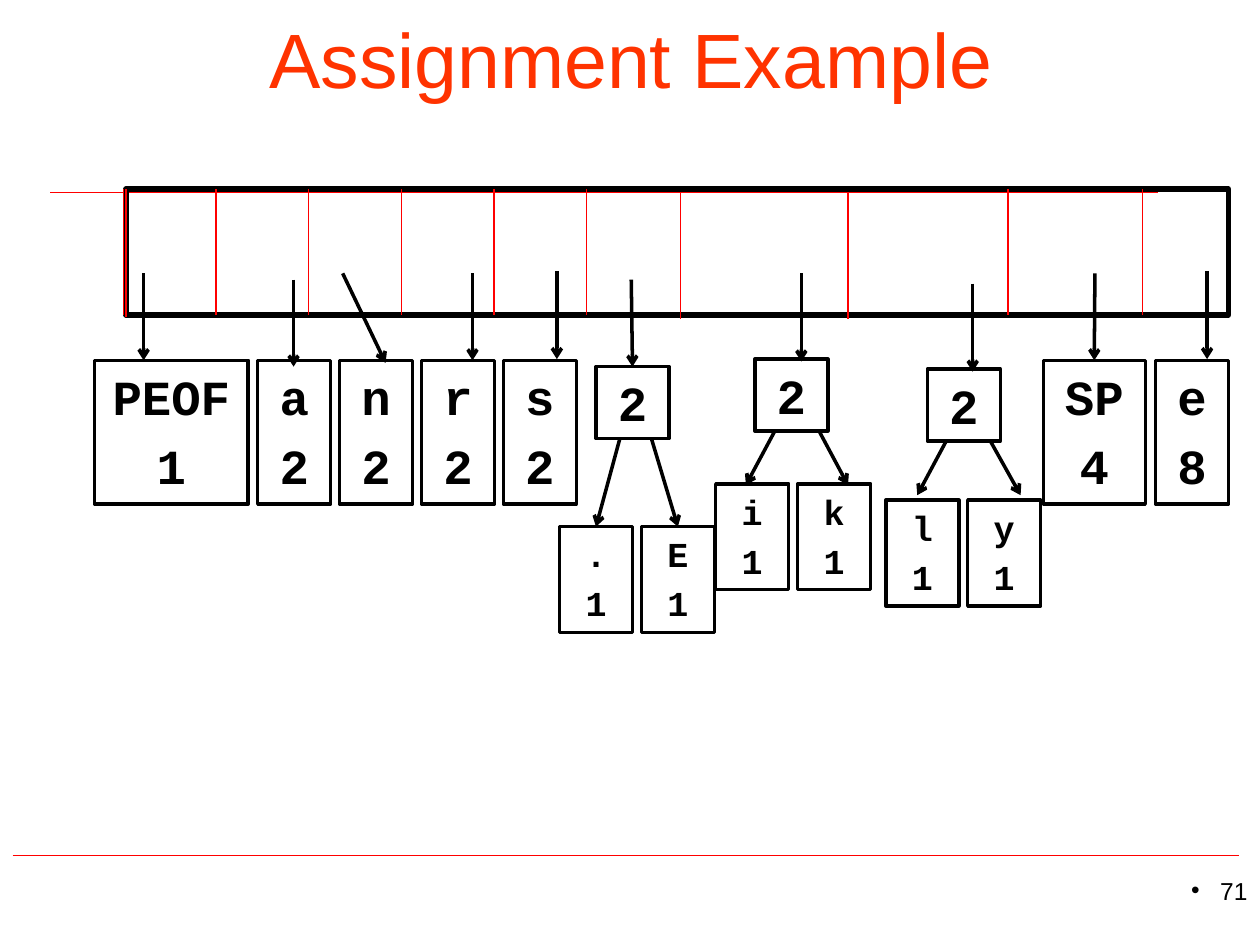
from dataclasses import dataclass

from lxml.etree import SubElement
from pptx import Presentation
from pptx.dml.color import RGBColor
from pptx.enum.shapes import MSO_CONNECTOR, MSO_SHAPE
from pptx.enum.text import MSO_ANCHOR, MSO_AUTO_SIZE, PP_ALIGN
from pptx.oxml.ns import qn
from pptx.util import Inches, Pt

BLACK = RGBColor(0x00, 0x00, 0x00)
RED = RGBColor(0xFF, 0x00, 0x00)
ORANGE = RGBColor(0xFF, 0x33, 0x00)

WIDTH, HEIGHT = Inches(10), Inches(7.5)
COLS, ROWS = 100, 75
NODE_W, NODE_H, LEAF_H, ENTRY_H = 5.8, 5.7, 8.4, 11.4
PITCH = 6.5
SNAP = 0.25


@dataclass
class Entry:
    """A symbol with its count, kept directly in the queue."""
    x: float
    symbol: str
    count: int
    w: float = NODE_W


@dataclass
class Tree:
    """A merged node, its two leaves and the columns of its branches."""
    x: float
    y: float
    leaf_x: float
    leaf_y: float
    symbols: str
    starts: tuple
    ends: tuple
    end_y: float


@dataclass
class Line:
    """A straight line in grid units."""
    x1: float
    y1: float
    x2: float
    y2: float


ENTRIES = [
    Entry(7.5, "PEOF", 1, 12.2),
    *[Entry(20.45 + i * PITCH, c, 2) for i, c in enumerate("anrs")],
    Entry(82.8, "SP", 4, 8.1),
    Entry(91.7, "e", 8),
]
TREES = [
    Tree(47.3, 29.1, 44.4, 41.8, ".E", (49.2, 51.7), (47.3, 54), 41.8),
    Tree(59.9, 28.5, 56.8, 38.4, "ik", (61.5, 65), (59.2, 67.3), 38.5),
    Tree(73.6, 29.3, 70.3, 39.7, "ly", (75.1, 78.6), (72.8, 81), 39.3),
]
RULES = [Line(4, 15.3, 91.9, 15.3), Line(1, 67.9, 98.3, 67.9)]
DIVIDERS = [
    Line(10, 15, 10, 25.2),
    *[Line(x, 15, x, 25) for x in [9.8 + i * 7.35 for i in range(6)] + [80, 90.7]],
    *[Line(x, 15.3, x, 25.3) for x in (54, 67.3)],
]
POINTERS = [
    Line(11.4, 21.7, 11.4, 28.6),
    Line(23.3, 22.2, 23.3, 29.1),
    Line(27.2, 21.7, 30.6, 28.8),
    Line(37.5, 21.7, 37.5, 28.6),
    Line(44.2, 21.5, 44.2, 28.5),
    Line(50.1, 22.2, 50.1, 29.1),
    Line(63.6, 21.7, 63.6, 28.7),
    Line(77.2, 22.5, 77.2, 29.5),
    Line(86.9, 21.7, 86.9, 28.7),
    Line(95.8, 21.5, 95.8, 28.5),
]


def col(n: float) -> int:
    """Turn grid columns into a length."""
    return round(WIDTH * n / COLS)


def row(n: float) -> int:
    """Turn grid rows into a length."""
    return round(HEIGHT * n / ROWS)


def write(sp, text: str, *, size: float, font: str = "Arial", color: RGBColor = BLACK,
          bold: bool = False, align=PP_ALIGN.CENTER, anchor=MSO_ANCHOR.TOP,
          before: float = 0, auto_size=MSO_AUTO_SIZE.NONE):
    """Fill a shape with one paragraph per line of text."""
    tf = sp.text_frame
    tf.word_wrap = True
    tf.auto_size = auto_size
    tf.vertical_anchor = anchor
    for i, line in enumerate(text.split("\n")):
        p = tf.add_paragraph() if i else tf.paragraphs[0]
        p.alignment = align
        p.space_before = Pt(size * before)
        r = p.add_run()
        r.text = line
        r.font.name, r.font.size, r.font.bold = font, Pt(size), bold
        r.font.color.rgb = color
    return tf


def add_text(s, x: float, y: float, w: float, h: float, text: str, **fmt):
    """Add a text box in grid units."""
    return write(s.shapes.add_textbox(col(x), row(y), col(w), row(h)), text, **fmt)


def add_box(s, x: float, y: float, w: float, h: float, weight: float = 2):
    """Add an unfilled black rectangle."""
    sp = s.shapes.add_shape(MSO_SHAPE.RECTANGLE, col(x), row(y), col(w), row(h))
    sp.shadow.inherit = False
    sp.fill.background()
    sp.line.color.rgb, sp.line.width = BLACK, Pt(weight)
    return sp


def add_node(s, x: float, y: float, w: float, h: float, text: str, size: float = 28):
    """Add a labelled tree node."""
    sp = add_box(s, x, y, w, h)
    write(sp, text, size=size, font="Courier New", bold=True, before=0.2,
          auto_size=MSO_AUTO_SIZE.SHAPE_TO_FIT_TEXT)
    return sp


def add_line(s, ln: Line, color: RGBColor = RED, weight: float = 0.75):
    """Add a plain straight connector."""
    cx = s.shapes.add_connector(MSO_CONNECTOR.STRAIGHT, col(ln.x1), row(ln.y1),
                                col(ln.x2), row(ln.y2))
    cx.line.color.rgb, cx.line.width = color, Pt(weight)
    SubElement(cx._element.spPr, qn("a:effectLst"))
    return cx


def add_arrow(s, ln: Line, nodes: list) -> None:
    """Add an arrow, joined to a node whose top middle it reaches."""
    cx = add_line(s, ln, BLACK, 2)
    SubElement(cx.line._get_or_add_ln(), qn("a:tailEnd"), type="arrow")
    for sp in nodes:
        dx = abs(sp.left + sp.width / 2 - col(ln.x2))
        dy = abs(sp.top - row(ln.y2))
        if dx < col(SNAP) and dy < row(SNAP):
            cx.end_connect(sp, 0)


def add_tree(s, t: Tree) -> list:
    """Add a merged node with its leaves and branches, and return the nodes."""
    nodes = [add_node(s, t.x, t.y, NODE_W, NODE_H, "2")]
    for i, c in enumerate(t.symbols):
        nodes.append(add_node(s, t.leaf_x + i * PITCH, t.leaf_y, NODE_W, LEAF_H,
                              f"{c}\n1", 20))
    for x1, x2 in zip(t.starts, t.ends):
        add_arrow(s, Line(x1, t.y + NODE_H, x2, t.end_y), nodes)
    return nodes


def add_page_number(s, text: str) -> None:
    """Add the bulleted page number."""
    tf = add_text(s, 76.7, 69, 23.3, 5.2, text, size=14, align=PP_ALIGN.RIGHT)
    pPr = tf.paragraphs[0]._p.get_or_add_pPr()
    pPr.set("marL", str(col(2.3)))
    pPr.set("indent", str(-col(2.3)))
    SubElement(pPr, qn("a:buFont"), typeface="Arial")
    SubElement(pPr, qn("a:buChar"), char="•")


def main() -> None:
    """Build and save the slide."""
    prs = Presentation()
    prs.slide_width, prs.slide_height = WIDTH, HEIGHT
    s = prs.slides.add_slide(prs.slide_layouts[6])
    for ln in RULES:
        add_line(s, ln)
    add_text(s, 7.6, -1.7, 85, 12.5, "Assignment Example", size=44, color=ORANGE,
             anchor=MSO_ANCHOR.MIDDLE)
    add_page_number(s, "71")
    nodes = [add_node(s, e.x, 28.6, e.w, ENTRY_H, f"{e.symbol}\n{e.count}")
             for e in ENTRIES]
    for t in TREES:
        nodes += add_tree(s, t)
    add_box(s, 10, 15, 87.5, 10, 3)
    for ln in DIVIDERS:
        add_line(s, ln)
    for ln in POINTERS:
        add_arrow(s, ln, nodes)
    prs.save("out.pptx")


if __name__ == "__main__":
    main()
